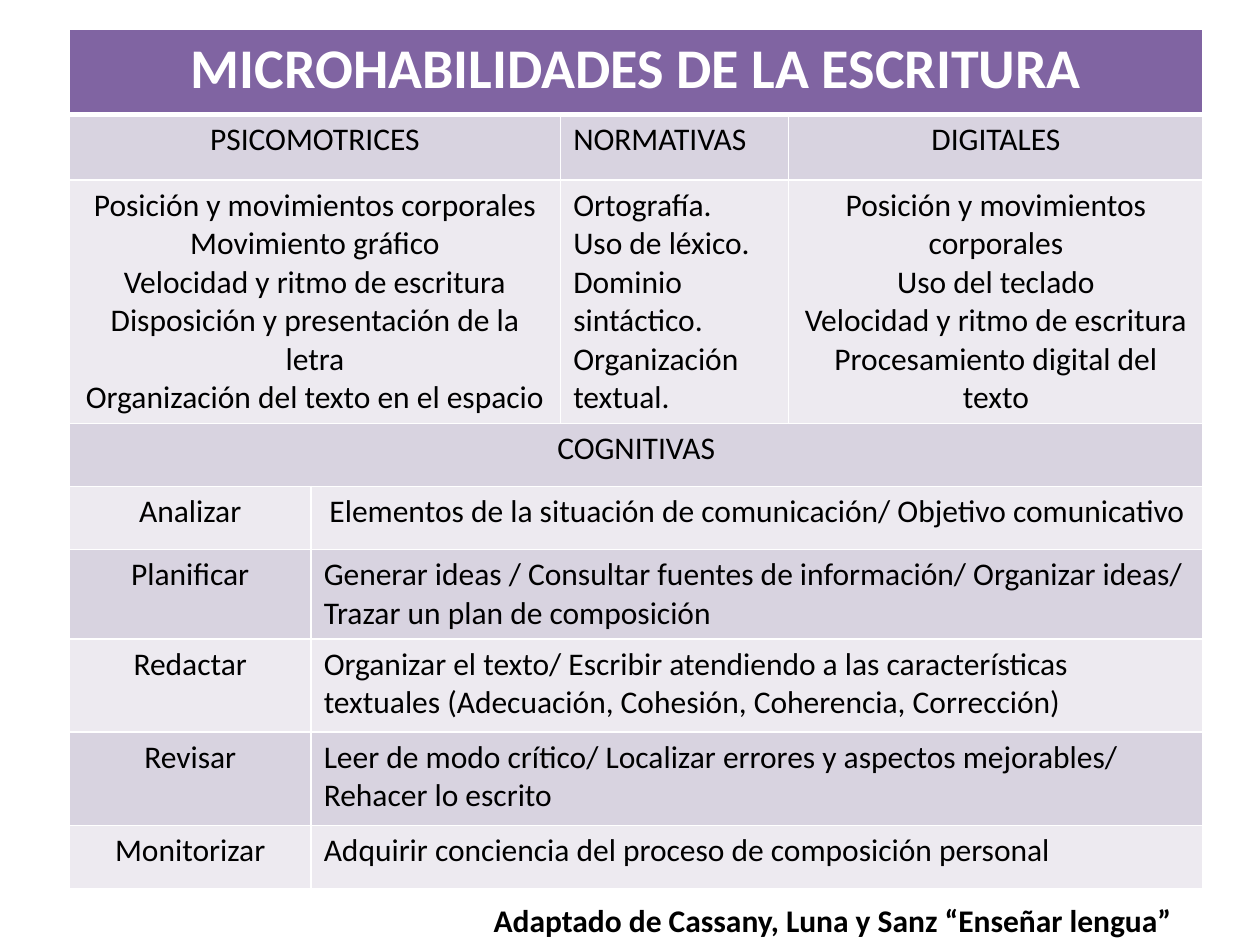
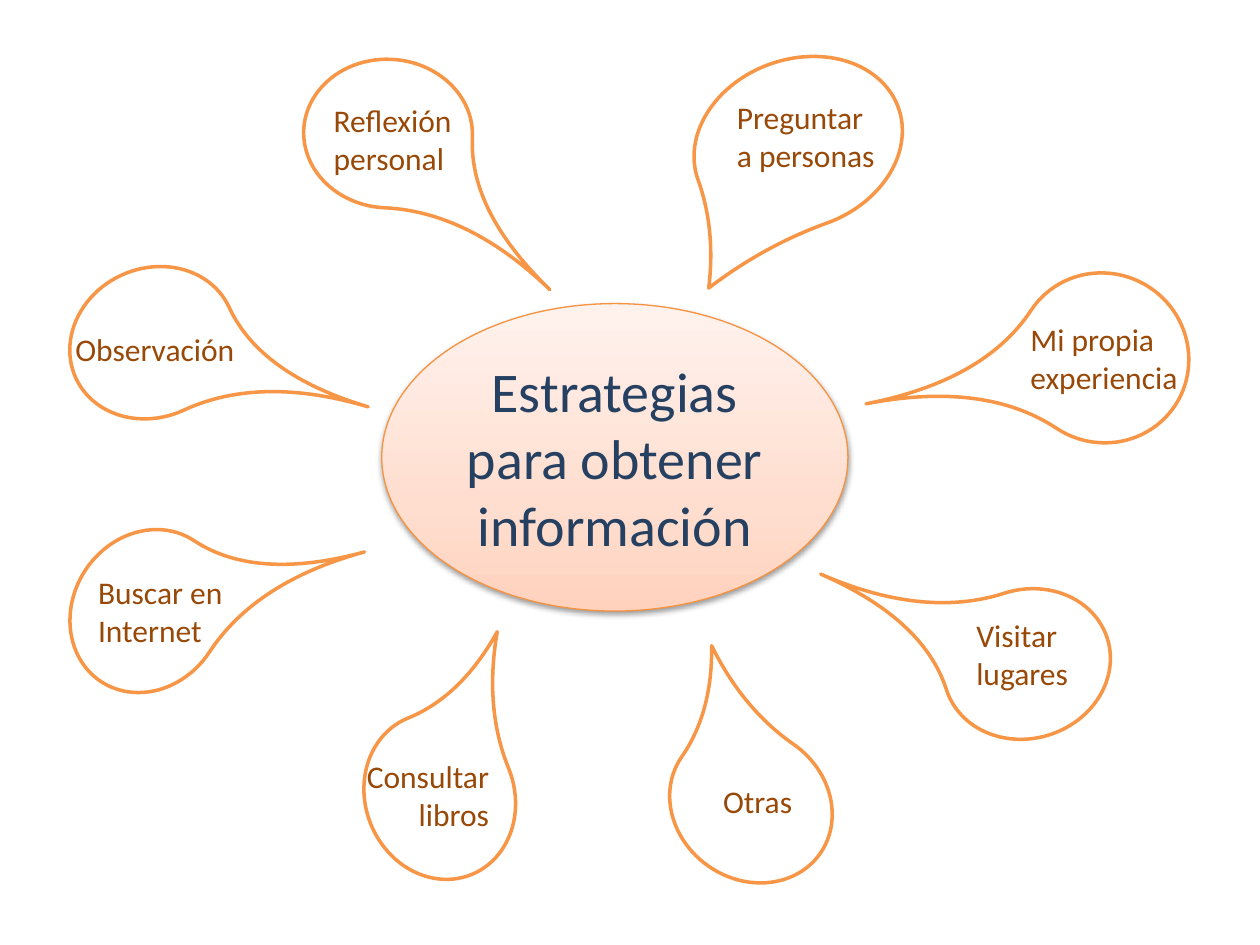
from copy import deepcopy

from lxml.etree import SubElement
from pptx import Presentation
from pptx.dml.color import RGBColor
from pptx.enum.shapes import MSO_SHAPE
from pptx.enum.text import MSO_ANCHOR, PP_ALIGN
from pptx.oxml import parse_xml
from pptx.oxml.ns import nsdecls, qn
from pptx.util import Inches, Pt

FONT = "Calibri"
WHITE, BLACK = "FFFFFF", "000000"
HEADER, DARK_BAND, LIGHT_BAND = "8064A2", "D8D3E0", "EDEAF0"
ORANGE, BROWN, NAVY = "F79646", "984807", "254061"
LEFT, CENTER, RIGHT = PP_ALIGN.LEFT, PP_ALIGN.CENTER, PP_ALIGN.RIGHT

COLUMN_WIDTHS = [1.92, 1.98, 1.81, 3.29]
ROW_HEIGHTS = [0.68, 0.52, 1.93, 0.5, 0.5, 0.71, 0.74, 0.74, 0.5]
# Each entry: first column, last column, text, alignment
SKILL_ROWS = [
    [(0, 3, "MICROHABILIDADES DE LA ESCRITURA", CENTER)],
    [(0, 1, "PSICOMOTRICES", CENTER), (2, 2, "NORMATIVAS", LEFT), (3, 3, "DIGITALES", CENTER)],
    [
        (0, 1, "Posición y movimientos corporales\nMovimiento gráfico\n"
               "Velocidad y ritmo de escritura\n"
               "Disposición y presentación de la letra\n"
               "Organización del texto en el espacio", CENTER),
        (2, 2, "Ortografía.\nUso de léxico.\nDominio sintáctico.\nOrganización textual.", LEFT),
        (3, 3, "Posición y movimientos corporales\nUso del teclado\n"
               "Velocidad y ritmo de escritura\nProcesamiento digital del texto", CENTER),
    ],
    [(0, 3, "COGNITIVAS", CENTER)],
    [(0, 0, "Analizar", CENTER),
     (1, 3, "Elementos de la situación de comunicación/ Objetivo comunicativo", CENTER)],
    [(0, 0, "Planificar", CENTER),
     (1, 3, "Generar ideas / Consultar fuentes de información/ Organizar ideas/ "
            "Trazar un plan de composición", LEFT)],
    [(0, 0, "Redactar", CENTER),
     (1, 3, "Organizar el texto/ Escribir atendiendo a las características textuales "
            "(Adecuación, Cohesión, Coherencia, Corrección)", LEFT)],
    [(0, 0, "Revisar", CENTER),
     (1, 3, "Leer de modo crítico/ Localizar errores y aspectos mejorables/ "
            "Rehacer lo escrito", LEFT)],
    [(0, 0, "Monitorizar", CENTER),
     (1, 3, "Adquirir conciencia del proceso de composición personal", LEFT)],
]

DROP_HEIGHT = 1.34
STRATEGIES = [
    ("Observación", (0.5, 2.57, 1.56, 0.4), (0.62, 2.05, 1.18), 65.2, 2, LEFT),
    ("Buscar en Internet", (0.68, 4.5, 1.2, 0.71), (0.58, 4.18, 1.18), 33.4, 2, LEFT),
    ("Mi propia experiencia", (8.08, 2.49, 1.54, 0.71), (8.07, 2.17, 1.37), 213.4, 2, LEFT),
    ("Preguntar a personas", (5.75, 0.73, 1.34, 0.71), (5.49, 0.47, 1.69), 160.2, 1.25, LEFT),
    ("Consultar libros", (2.74, 5.96, 1.24, 0.71), (2.9, 5.65, 1.18), 337.9, 1.55, RIGHT),
    ("Visitar lugares", (7.65, 4.84, 0.98, 0.71), (7.56, 4.6, 1.18), 252.2, 2, LEFT),
    ("Reflexión personal", (2.55, 0.75, 1.18, 0.71), (2.49, 0.39, 1.18), 92.6, 2, LEFT),
    ("Otras", (5.64, 6.16, 0.94, 0.4), (5.37, 5.72, 1.18), 304.8, 1.46, LEFT),
]


def color(value):
    return RGBColor.from_string(value)


def write(frame, text, size=18, ink=BLACK, bold=False, align=LEFT):
    frame.word_wrap = True
    for index, line in enumerate(text.split("\n")):
        para = frame.add_paragraph() if index else frame.paragraphs[0]
        para.alignment = align
        span = para.add_run()
        span.text = line
        span.font.name = FONT
        span.font.size = Pt(size)
        span.font.bold = bold
        span.font.color.rgb = color(ink)


def set_borders(cell, top=1, bottom=1):
    properties = cell._tc.get_or_add_tcPr()
    for index, (side, width) in enumerate([("L", 1), ("R", 1), ("T", top), ("B", bottom)]):
        properties.insert(index, parse_xml(
            f'<a:ln{side} {nsdecls("a")} w="{Pt(width)}"><a:solidFill>'
            f'<a:srgbClr val="{WHITE}"/></a:solidFill></a:ln{side}>'))


class SlideBuilder:
    def __init__(self, deck):
        self.deck = deck
        self.page = None

    def new_page(self):
        self.page = self.deck.slides.add_slide(self.deck.slide_layouts[6])

    def text(self, text, place, **style):
        box = self.page.shapes.add_textbox(*map(Inches, place))
        write(box.text_frame, text, **style)

    def shape(self, kind, place, line, width):
        shape = self.page.shapes.add_shape(kind, *map(Inches, place))
        shape.shadow.inherit = False
        shape.line.color.rgb = color(line)
        shape.line.width = Pt(width)
        return shape

    def teardrop(self, place, rotation, point):
        drop = self.shape(MSO_SHAPE.TEAR, place, ORANGE, 2)
        drop.fill.solid()
        drop.fill.fore_color.rgb = color(WHITE)
        drop.adjustments[0] = point
        drop.rotation = rotation

    def hub(self, text, place):
        hub = self.shape(MSO_SHAPE.OVAL, place, "F69240", 0.75)
        hub.fill.gradient()
        hub.fill.gradient_angle = 90
        properties = hub._element.spPr
        stops = properties.find(qn("a:gradFill")).find(qn("a:gsLst"))
        stops.insert(1, deepcopy(stops[0]))
        gradient = [(0, "FFD2BD"), (0.35, "FFDED0"), (1, "FFF2ED")]
        for stop, (position, tint) in zip(hub.fill.gradient_stops, gradient):
            stop.position = position
            stop.color.rgb = color(tint)
        shadow = SubElement(properties.find(qn("a:effectLst")), qn("a:outerShdw"),
                            blurRad="40000", dist="20000", dir="5400000", rotWithShape="0")
        shade = SubElement(shadow, qn("a:srgbClr"), val=BLACK)
        SubElement(shade, qn("a:alpha"), val="38000")
        hub.text_frame.vertical_anchor = MSO_ANCHOR.MIDDLE
        write(hub.text_frame, text, size=32, ink=NAVY, align=CENTER)

    def table(self, rows, left, top):
        place = (left, top, sum(COLUMN_WIDTHS), sum(ROW_HEIGHTS))
        table = self.page.shapes.add_table(
            len(ROW_HEIGHTS), len(COLUMN_WIDTHS), *map(Inches, place)).table
        for column, width in zip(table.columns, COLUMN_WIDTHS):
            column.width = Inches(width)
        for index, (row, height, entries) in enumerate(zip(table.rows, ROW_HEIGHTS, rows)):
            row.height = Inches(height)
            header = index == 0
            band = HEADER if header else DARK_BAND if index % 2 else LIGHT_BAND
            for cell in row.cells:
                cell.fill.solid()
                cell.fill.fore_color.rgb = color(band)
                set_borders(cell, top=3 if index == 1 else 1, bottom=3 if header else 1)
            for first, last, text, align in entries:
                cell = table.cell(index, first)
                if last > first:
                    cell.merge(table.cell(index, last))
                write(cell.text_frame, text, size=32 if header else 18,
                      ink=WHITE if header else BLACK, bold=header, align=align)


def main():
    deck = Presentation()
    deck.slide_width, deck.slide_height = Inches(10), Inches(7.5)
    builder = SlideBuilder(deck)

    builder.new_page()
    builder.table(SKILL_ROWS, 0.55, 0.23)
    builder.text("Adaptado de Cassany, Luna y Sanz “Enseñar lengua”",
                 (1.8, 7.1, 7.6, 0.4), bold=True, align=RIGHT)

    builder.new_page()
    builder.hub("Estrategias para obtener información", (3.03, 2.41, 3.7, 2.44))
    for label, label_place, drop_place, rotation, point, align in STRATEGIES:
        builder.teardrop((*drop_place, DROP_HEIGHT), rotation, point)
        builder.text(label, label_place, ink=BROWN, align=align)

    deck.save("out.pptx")


if __name__ == "__main__":
    main()
